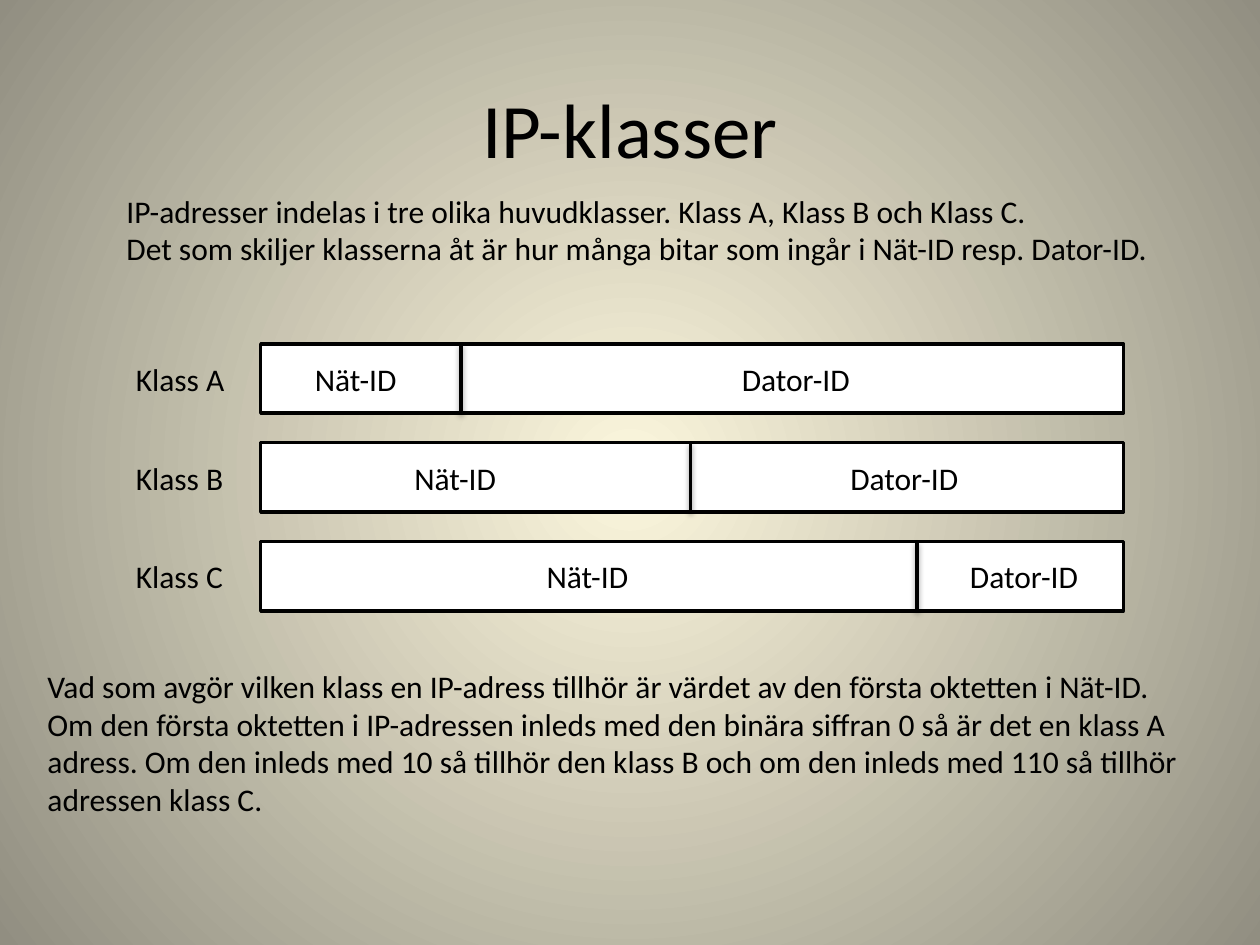
from lxml.etree import SubElement
from pptx import Presentation
from pptx.dml.color import RGBColor
from pptx.enum.shapes import MSO_CONNECTOR, MSO_SHAPE
from pptx.enum.text import MSO_ANCHOR, MSO_AUTO_SIZE, PP_ALIGN
from pptx.oxml.ns import qn
from pptx.util import Pt

BLACK = RGBColor(0x00, 0x00, 0x00)
WHITE = RGBColor(0xFF, 0xFF, 0xFF)
CREAM = RGBColor(0xFC, 0xF7, 0xDD)
TAUPE = RGBColor(0x91, 0x8E, 0x81)

INTRO = [
    "IP-adresser indelas i tre olika huvudklasser. Klass A, Klass B och Klass C.",
    "Det som skiljer klasserna åt är hur många bitar som ingår i Nät-ID resp. Dator-ID.",
]
RULE = (
    "Vad som avgör vilken klass en IP-adress tillhör är värdet av den första oktetten i "
    "Nät-ID. Om den första oktetten i IP-adressen inleds med den binära siffran 0 så är det "
    "en klass A adress. Om den inleds med 10 så tillhör den klass B och om den inleds med "
    "110 så tillhör adressen klass C."
)
# Class, then offsets from the bar's left edge: divider, network label, host label
CLASSES = [
    ("Klass A", 114.5, 23.8, 267.8),
    ("Klass B", 245.5, 80.7, 329.8),
    ("Klass C", 375, 156.2, 398.2),
]
LABEL_OFFSET = -78.5
ROW_PITCH = 56.5


def add_text(page, lines, left, top, width, height, size=18, align=PP_ALIGN.LEFT,
             anchor=MSO_ANCHOR.TOP, wrap=False, grow=True):
    box = page.shapes.add_textbox(Pt(left), Pt(top), Pt(width), Pt(height))
    frame = box.text_frame
    frame.word_wrap = wrap
    frame.auto_size = MSO_AUTO_SIZE.SHAPE_TO_FIT_TEXT if grow else MSO_AUTO_SIZE.NONE
    frame.vertical_anchor = anchor
    frame.text = "\n".join(lines)
    for para in frame.paragraphs:
        para.alignment = align
        para.font.size = Pt(size)
        for span in para.runs:
            span.font.size = Pt(size)
            span.font.name = "Calibri"
            span.font.color.rgb = BLACK


def add_background(page):
    """Fill the page with a gradient that spreads in circles from the centre."""
    fill = page.background.fill
    fill.gradient()
    for stop, color, position in zip(fill.gradient_stops, (CREAM, TAUPE), (0, 1)):
        stop.color.rgb = color
        stop.position = position
    gradient = page.element.find(".//" + qn("a:gradFill"))
    gradient.remove(gradient.find(qn("a:lin")))
    circle = SubElement(gradient, qn("a:path"))
    circle.set("path", "circle")
    center = SubElement(circle, qn("a:fillToRect"))
    for side in "ltrb":
        center.set(side, "50000")


def add_divider(page, x, top, height):
    """Draw a vertical line with a soft shadow below it."""
    line = page.shapes.add_connector(MSO_CONNECTOR.STRAIGHT, Pt(x), Pt(top), Pt(x), Pt(top + height))
    line.line.color.rgb = BLACK
    line.line.width = Pt(2)
    effects = SubElement(line.element.spPr, qn("a:effectLst"))
    shadow = SubElement(effects, qn("a:outerShdw"), blurRad=str(Pt(3.1)), dist=str(Pt(1.6)),
                        dir="5400000", rotWithShape="0")
    color = SubElement(shadow, qn("a:srgbClr"), val=str(BLACK))
    SubElement(color, qn("a:alpha"), val="38000")


def add_class_row(page, name, divider, network, host, left, top, width, height):
    bar = page.shapes.add_shape(MSO_SHAPE.RECTANGLE, Pt(left), Pt(top), Pt(width), Pt(height))
    bar.shadow.inherit = False
    bar.fill.solid()
    bar.fill.fore_color.rgb = WHITE
    bar.line.color.rgb = BLACK
    bar.line.width = Pt(2)
    add_divider(page, left + divider, top, height)
    labels = [(name, LABEL_OFFSET, 65), ("Nät-ID", network, 62), ("Dator-ID", host, 78)]
    for text, offset, label_width in labels:
        add_text(page, [text], left + offset, top + 5.5, label_width, 29)


def add_class_diagram(page, left, top, width, bar_height):
    for index, row in enumerate(CLASSES):
        add_class_row(page, *row, left, top + index * ROW_PITCH, width, bar_height)


def main():
    deck = Presentation()
    deck.slide_width, deck.slide_height = Pt(720), Pt(540)
    page = deck.slides.add_slide(deck.slide_layouts[6])
    add_background(page)
    add_text(page, ["IP-klasser"], 54, 15, 612, 116, size=44, align=PP_ALIGN.CENTER,
             anchor=MSO_ANCHOR.MIDDLE, wrap=True, grow=False)
    add_text(page, INTRO, 65.2, 106, 601, 51)
    add_class_diagram(page, 149, 196.5, 493, 39.6)
    add_text(page, [RULE], 20, 377.5, 663, 94.5, wrap=True)
    deck.save("out.pptx")


if __name__ == "__main__":
    main()
